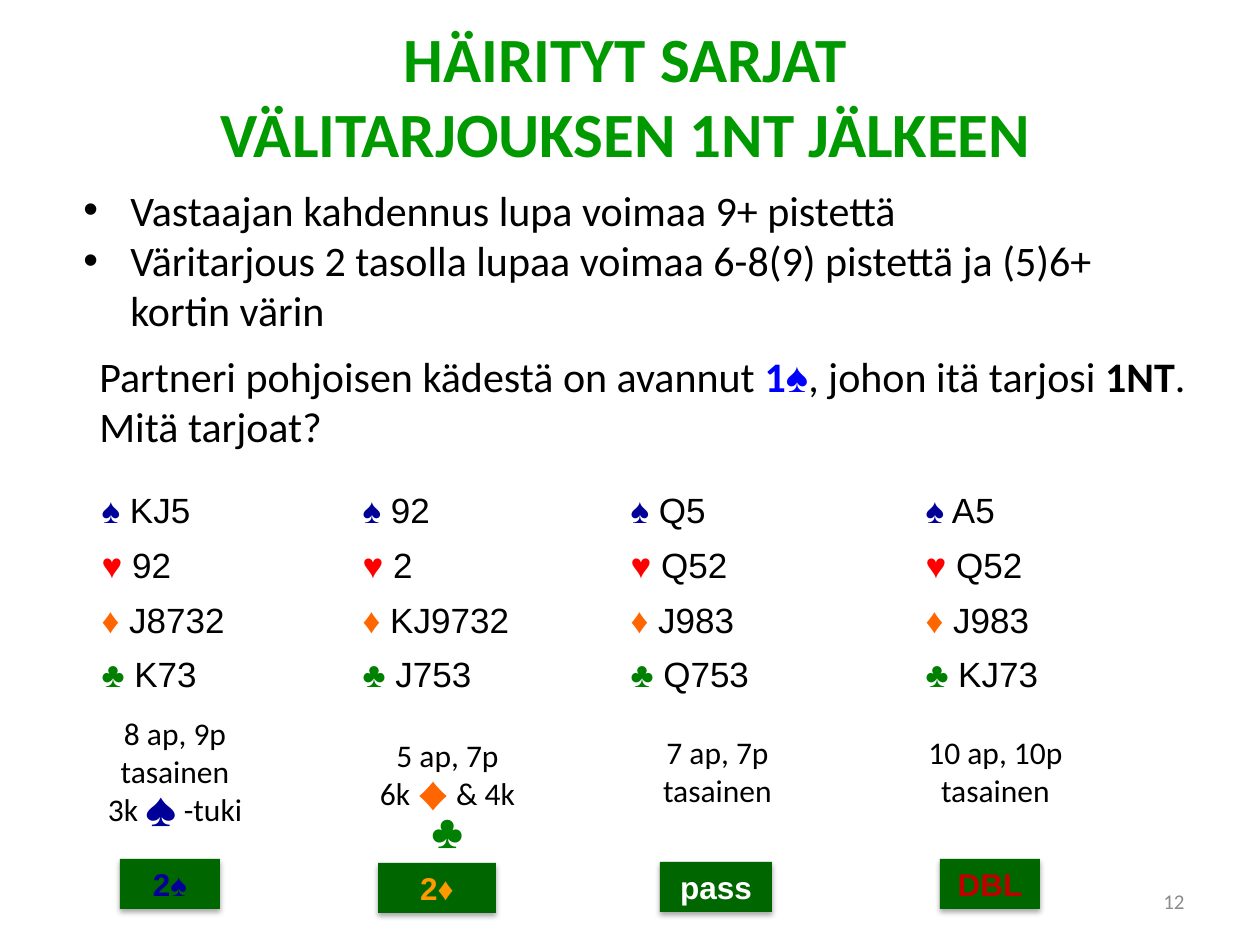
"""Builds a bridge lesson slide on responding after a 1NT overcall."""
from lxml.etree import SubElement
from pptx import Presentation
from pptx.dml.color import RGBColor
from pptx.enum.shapes import MSO_SHAPE as Preset
from pptx.enum.text import MSO_ANCHOR as Anchor, MSO_AUTO_SIZE as Fit, PP_ALIGN as Align
from pptx.oxml.ns import qn
from pptx.util import Pt

PX = 914400 / 126


class Theme:
    body, cards = "Calibri", "Arial"
    title_size, text_size, hand_size, note_size, number_size = 36, 24, 20, 18, 12
    ink, title, opening, number = "000000", "009900", "0000FF", "8C8C8C"
    spade, heart, diamond, club = "000099", "FF0000", "FF6600", "008000"
    call_fill, call_diamond, call_pass, call_double = "006600", "FF9900", "FFFFFF", "C00000"


def px(*lengths):
    return [round(length * PX) for length in lengths]


def write(frame, paragraphs, size, align=Align.LEFT, font=Theme.body):
    for index, pieces in enumerate(paragraphs):
        paragraph = frame.paragraphs[0] if index == 0 else frame.add_paragraph()
        paragraph.alignment = align
        for words, color, bold, *face in pieces:
            run = paragraph.add_run()
            run.text = words
            run.font.size = Pt(size)
            run.font.bold = bold
            run.font.name = face[0] if face else font
            run.font.color.rgb = RGBColor.from_string(color)


deck = Presentation()
deck.slide_width, deck.slide_height = px(1260, 945)
slide = deck.slides.add_slide(deck.slide_layouts[6])
ink = Theme.ink

texts = [
    ((134, 13, 983, 165), Theme.title_size, Align.CENTER,
     [[("HÄIRITYT SARJAT", Theme.title, True)],
      [("VÄLITARJOUKSEN 1NT JÄLKEEN", Theme.title, True)]]),
    ((71, 178, 1121, 165), Theme.text_size, Align.LEFT,
     [[("Vastaajan kahdennus lupa voimaa 9+ pistettä", ink, False)],
      [("Väritarjous 2 tasolla lupaa voimaa 6-8(9) pistettä ja (5)6+ kortin värin", ink, False)]]),
    ((87, 344, 1111, 115), Theme.text_size, Align.LEFT,
     [[("Partneri pohjoisen kädestä on avannut ", ink, False),
       ("1", Theme.opening, True), ("♠", Theme.opening, False, Theme.cards),
       (", johon itä tarjosi ", ink, False), ("1NT", ink, True),
       (". Mitä tarjoat?", ink, False)]]),
    ((91, 708, 168, 127), Theme.note_size, Align.CENTER,
     [[("8 ap, 9p", ink, False)], [("tasainen", ink, False)],
      [("3k ", ink, False), ("♠", Theme.spade, False), (" -tuki", ink, False)]]),
    ((358, 730, 179, 89), Theme.note_size, Align.CENTER,
     [[("5 ap, 7p", ink, False)],
      [("6k ", ink, False), ("♦ ", Theme.diamond, False),
       ("& 4k ", ink, False), ("♣", Theme.club, False)]]),
    ((614, 727, 207, 89), Theme.note_size, Align.CENTER,
     [[("7 ap, 7p", ink, False)], [("tasainen", ink, False)]]),
    ((888, 727, 215, 89), Theme.note_size, Align.CENTER,
     [[("10 ap, 10p", ink, False)], [("tasainen", ink, False)]]),
    ((903, 876, 294, 50), Theme.number_size, Align.RIGHT,
     [[("12", Theme.number, False)]]),
]
frames = []
for place, size, align, paragraphs in texts:
    frame = slide.shapes.add_textbox(*px(*place)).text_frame
    frame.word_wrap = True
    frame.auto_size = Fit.SHAPE_TO_FIT_TEXT
    write(frame, paragraphs, size, align)
    frames.append(frame)

rules, page_number = frames[1], frames[-1]
page_number.auto_size = Fit.NONE
page_number.vertical_anchor = Anchor.MIDDLE
indent = px(47)[0]
for rule in rules.paragraphs:
    properties = rule._p.get_or_add_pPr()
    properties.set("marL", str(indent))
    properties.set("indent", str(-indent))
    SubElement(properties, qn("a:buFont"), typeface=Theme.cards)
    SubElement(properties, qn("a:buChar"), char="•")

suits = [("♠", Theme.spade), ("♥", Theme.heart), ("♦", Theme.diamond), ("♣", Theme.club)]
holdings = [
    ("KJ5", "92", "Q5", "A5"),
    ("92", "2", "Q52", "Q52"),
    ("J8732", "KJ9732", "J983", "J983"),
    ("K73", "J753", "Q753", "KJ73"),
]
hands = slide.shapes.add_table(4, 4, *px(89, 486, 1109, 207)).table
hands.first_row = hands.horz_banding = False
for column, width in zip(hands.columns, px(261, 268, 295, 285)):
    column.width = width
for row, height, (symbol, color), holding in zip(hands.rows, px(53, 54, 50, 50), suits, holdings):
    row.height = height
    for cell, ranks in zip(row.cells, holding):
        cell.fill.background()
        write(cell.text_frame, [[(symbol, color, False), (f" {ranks}", ink, False)]],
              Theme.hand_size, Align.JUSTIFY, Theme.cards)

calls = [
    ("2♠", Theme.spade, 120, 859, 100),
    ("2♦", Theme.call_diamond, 378, 863, 118),
    ("pass", Theme.call_pass, 660, 862, 112),
    ("DBL", Theme.call_double, 940, 859, 100),
]
for bid, color, left, top, width in calls:
    call = slide.shapes.add_shape(Preset.RECTANGLE, *px(left, top, width, 50))
    call.fill.solid()
    call.fill.fore_color.rgb = RGBColor.from_string(Theme.call_fill)
    call.line.fill.background()
    call.shadow.inherit = False
    effects = call._element.spPr.find(qn("a:effectLst"))
    shadow = SubElement(effects, qn("a:outerShdw"), blurRad="40000", dist="23000",
                        dir="5400000", rotWithShape="0")
    shade = SubElement(shadow, qn("a:srgbClr"), val=ink)
    SubElement(shade, qn("a:alpha"), val="35000")
    write(call.text_frame, [[(bid, color, True)]], Theme.note_size, Align.CENTER, Theme.cards)

deck.save("out.pptx")
